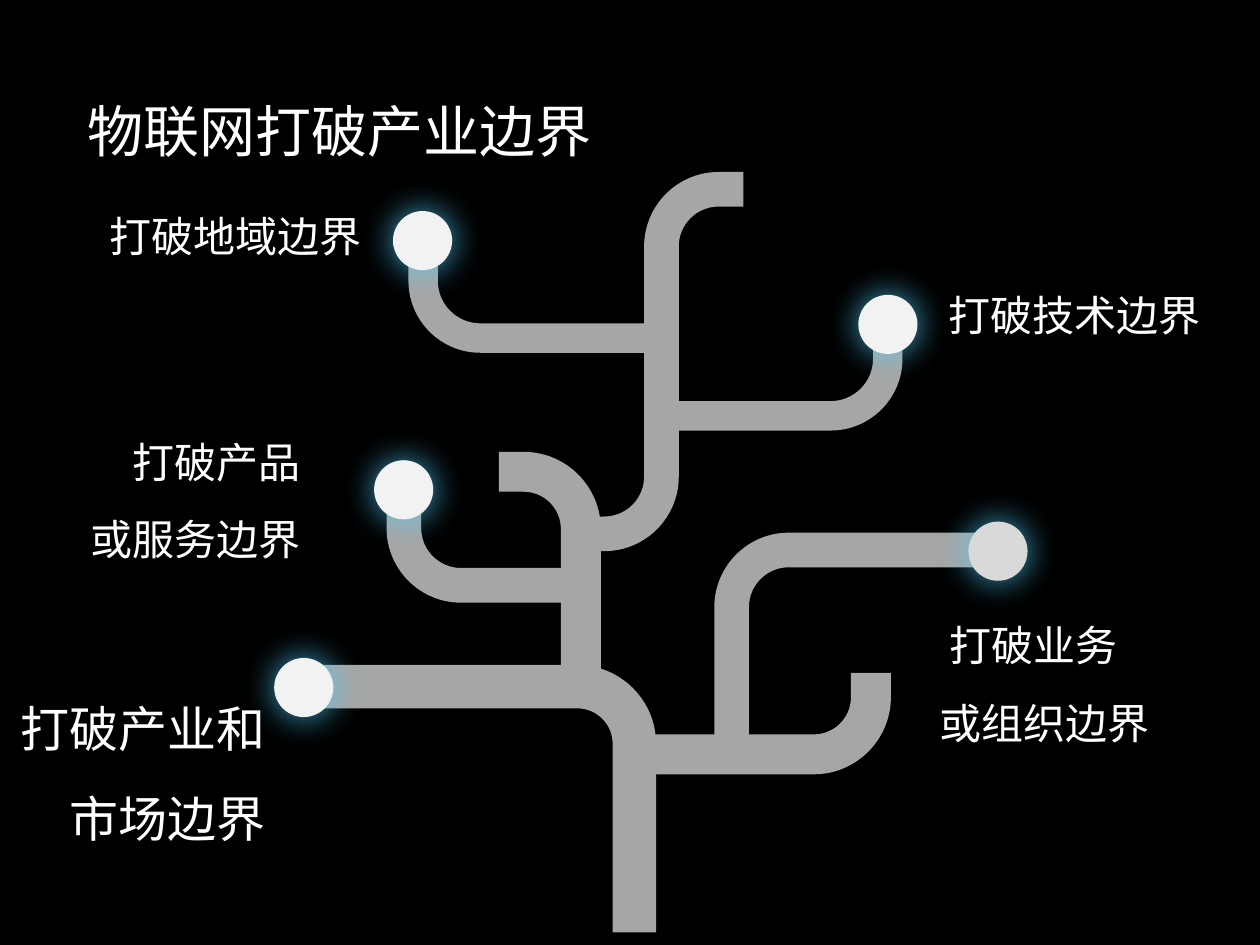
from lxml.etree import SubElement
from pptx import Presentation
from pptx.dml.color import RGBColor
from pptx.enum.shapes import MSO_SHAPE
from pptx.enum.text import MSO_ANCHOR, MSO_AUTO_SIZE, PP_ALIGN
from pptx.oxml.ns import qn
from pptx.util import Pt

FONT = "Noto Sans CJK SC"
BEND = 32.6
KAPPA = 0.55
NODE = 33.8

BRANCHES = [
    ("up", (362.5, 532.8), (172.8, 392.4), 24.8),
    ("across", (362.2, 431.1), (497.7, 384.5), 22.8),
    ("across", (381.6, 237.6), (507.3, 191.5), 16.8),
    ("up", (331.9, 393.1), (285.1, 269.6), 22.8),
    ("up", (418.1, 434.9), (571, 314.3), 19.8),
    ("across", (375.1, 193.2), (241.8, 146.9), 16.8),
    ("across", (331.2, 334.5), (230.8, 288), 19.8),
    ("across", (331.2, 305.1), (378, 204.5), 19.8),
    ("up", (378, 208.8), (424.8, 108.2), 19.8),
]

NODES = [
    (156.7, 376, "F2F2F2"),
    (213.8, 263, "F2F2F2"),
    (553.4, 298.1, "D9D9D9"),
    (490.5, 168.5, "F2F2F2"),
    (224.6, 120.6, "F2F2F2"),
]

LABELS = [
    ((-34.6, 231.5, 213.2, 96.5), ["打破产品", "或服务边界"], 24, PP_ALIGN.RIGHT),
    ((529.9, 336.2, 232.6, 141.8), [" 打破业务", "或组织边界"], 24, PP_ALIGN.LEFT),
    ((535, 147.6, 224.6, 105.8), ["打破技术边界"], 24, PP_ALIGN.LEFT),
    ((-43.2, 102.2, 257, 51.1), ["打破地域边界"], 24, PP_ALIGN.RIGHT),
    ((-82.8, 378.7, 241.5, 164.2), ["打破产业和", "市场边界"], 28, PP_ALIGN.RIGHT),
]


def rgb(value):
    return RGBColor.from_string(value)


def add_run(p, text, size):
    r = p.add_run()
    r.text = text
    r.font.size = Pt(size)
    r.font.color.rgb = rgb("FFFFFF")
    r.font.name = FONT
    SubElement(r._r.get_or_add_rPr(), qn("a:ea"), typeface=FONT)
    return r


def place(sp, box):
    sp.left, sp.top, sp.width, sp.height = [Pt(n) for n in box]


def fill_plain(sp, color):
    sp.shadow.inherit = False
    sp.fill.solid()
    sp.fill.fore_color.rgb = rgb(color)
    sp.line.fill.background()


def add_title(s, box, text):
    sp = s.shapes.title
    place(sp, box)
    tf = sp.text_frame
    tf.auto_size = MSO_AUTO_SIZE.NONE
    tf.vertical_anchor = MSO_ANCHOR.MIDDLE
    p = tf.paragraphs[0]
    p.alignment = PP_ALIGN.LEFT
    fill = add_run(p, text, 32).font.fill
    fill.gradient()
    fill.gradient_angle = 270
    for stop, color in zip(fill.gradient_stops, ("FFFFFF", "BFBFBF")):
        stop.color.rgb = rgb(color)


def unit(start, end):
    dx, dy = end[0] - start[0], end[1] - start[1]
    length = abs(dx) + abs(dy)
    return dx / length, dy / length


def branch_side(start, corner, end, offset):
    u, v = unit(corner, start), unit(corner, end)
    handle = (BEND + offset) * (1 - KAPPA) - offset

    def shift(point, along_u, along_v):
        return tuple(point[i] + along_u * u[i] + along_v * v[i] for i in (0, 1))

    return [
        shift(start, 0, -offset),
        shift(corner, BEND, -offset),
        shift(corner, handle, -offset),
        shift(corner, -offset, handle),
        shift(corner, -offset, BEND),
        shift(end, -offset, 0),
    ]


def merge_curve(lines):
    curve = lines[0].makeelement(qn("a:cubicBezTo"))
    lines[0].addprevious(curve)
    for line in lines:
        curve.append(line[0])
        line.getparent().remove(line)


def add_branch(s, first_leg, start, end, width):
    corner = (start[0], end[1]) if first_leg == "up" else (end[0], start[1])
    outer = branch_side(start, corner, end, width / 2)
    inner = branch_side(start, corner, end, -width / 2)
    points = [(Pt(x), Pt(y)) for x, y in outer + inner[::-1]]
    builder = s.shapes.build_freeform(*points[0])
    builder.add_line_segments(points[1:], close=True)
    sp = builder.convert_to_shape()
    fill_plain(sp, "A6A6A6")
    lines = list(sp._element.iter(qn("a:lnTo")))
    merge_curve(lines[1:4])
    merge_curve(lines[7:10])


def add_node(s, left, top, color):
    sp = s.shapes.add_shape(MSO_SHAPE.OVAL, Pt(left), Pt(top), Pt(NODE), Pt(NODE))
    fill_plain(sp, color)
    effects = sp._element.spPr.find(qn("a:effectLst"))
    glow = SubElement(effects, qn("a:outerShdw"), blurRad=str(Pt(20)), dist="0",
                      dir="0", algn="ctr", rotWithShape="0")
    tint = SubElement(glow, qn("a:srgbClr"), val="53D2FF")
    SubElement(tint, qn("a:alpha"), val="80000")


def add_label(s, box, lines, size, align):
    tf = s.shapes.add_textbox(*[Pt(n) for n in box]).text_frame
    tf.word_wrap = True
    for i, text in enumerate(lines):
        p = tf.add_paragraph() if i else tf.paragraphs[0]
        p.alignment = align
        p.line_spacing = Pt(size * 1.8)
        p.space_before = p.space_after = Pt(0.5)
        add_run(p, text, size)


def build_tree_slide(prs):
    s = prs.slides.add_slide(prs.slide_layouts[5])
    s.background.fill.solid()
    s.background.fill.fore_color.rgb = rgb("000000")
    add_title(s, (42.8, 42.5, 696.2, 64.1), "物联网打破产业边界")
    for branch in BRANCHES:
        add_branch(s, *branch)
    for node in NODES:
        add_node(s, *node)
    for label in LABELS:
        add_label(s, *label)


def main():
    prs = Presentation()
    prs.slide_width, prs.slide_height = Pt(720), Pt(540)
    build_tree_slide(prs)
    prs.save("out.pptx")


if __name__ == "__main__":
    main()
